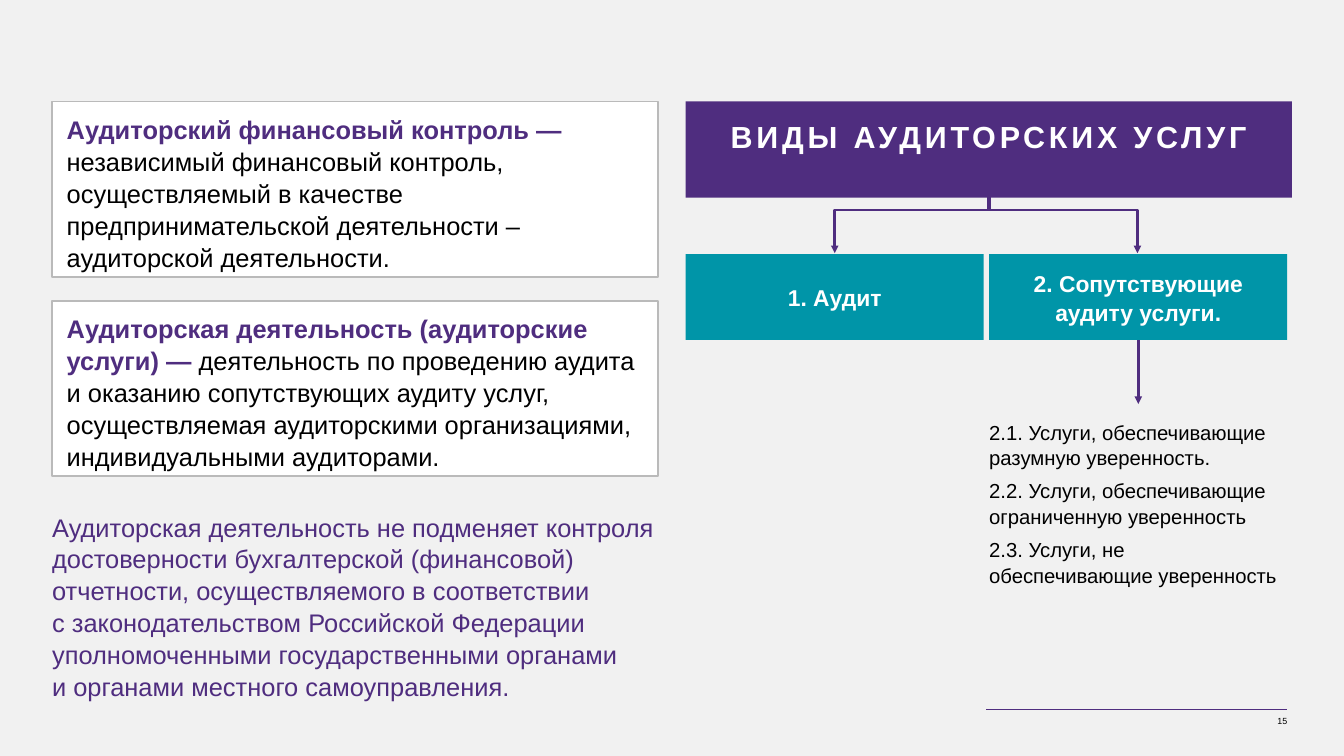
from pptx import Presentation
from pptx.dml.color import RGBColor
from pptx.enum.shapes import MSO_CONNECTOR as Link, MSO_SHAPE as Shape
from pptx.enum.text import MSO_ANCHOR as Anchor, MSO_AUTO_SIZE as AutoSize, PP_ALIGN as Align
from pptx.oxml.ns import qn
from pptx.util import Emu, Pt
from lxml.etree import SubElement

EMU_PER_PX = 9144
COLORS = {
    "background": "F1F1F1",
    "purple": "4F2D7F",
    "teal": "0095A8",
    "white": "FFFFFF",
    "black": "000000",
    "border": "BABABA",
}

LEFT, TOP, COLUMN_WIDTH = 57, 111, 663
CHART_LEFT, HEADING_HEIGHT = 750, 72
SERVICE_TOP, SERVICE_WIDTH, SERVICE_HEIGHT, SERVICE_STEP = 278, 326, 94, 332
DEFINITION_HEIGHT, DEFINITION_STEP = 192, 218
LIST_TOP = 442

DEFINITIONS = [
    ("Аудиторский финансовый контроль — ",
     "независимый финансовый контроль, осуществляемый в качестве "
     "предпринимательской деятельности – аудиторской деятельности."),
    ("Аудиторская деятельность (аудиторские услуги) — ",
     "деятельность по проведению аудита и оказанию сопутствующих аудиту услуг, "
     "осуществляемая аудиторскими организациями, индивидуальными аудиторами."),
]
REMARK = (
    "Аудиторская деятельность не подменяет контроля достоверности бухгалтерской "
    "(финансовой) отчетности, осуществляемого в соответствии\n"
    "с законодательством Российской Федерации уполномоченными государственными органами\n"
    "и органами местного самоуправления."
)
SERVICES = ["1. Аудит", "2. Сопутствующие аудиту услуги."]
RELATED_SERVICES = [
    "2.1. Услуги, обеспечивающие разумную уверенность.",
    "2.2. Услуги, обеспечивающие ограниченную уверенность",
    "2.3. Услуги, не обеспечивающие уверенность",
]


def px(*lengths):
    return [Emu(length * EMU_PER_PX) for length in lengths]


def rgb(name):
    return RGBColor.from_string(COLORS[name])


def set_frame(frame, insets, anchor=Anchor.TOP, grow=True, wrap=True):
    frame.margin_left, frame.margin_top, frame.margin_right, frame.margin_bottom = px(*insets)
    frame.vertical_anchor = anchor
    frame.auto_size = AutoSize.SHAPE_TO_FIT_TEXT if grow else AutoSize.NONE
    frame.word_wrap = wrap


def style_paragraph(paragraph, size, color=None, bold=None, align=Align.LEFT, before=0):
    paragraph.alignment = align
    paragraph.line_spacing = 1.05
    paragraph.space_before = Pt(before)
    font = paragraph.font
    font.name, font.size, font.bold = "Arial", Pt(size), bold
    if color:
        font.color.rgb = rgb(color)


def add_text(slide, box, texts, size, color, insets=(0, 0, 0, 0), wrap=True, **style):
    frame = slide.shapes.add_textbox(*px(*box)).text_frame
    set_frame(frame, insets, wrap=wrap)
    for index, text in enumerate(texts):
        paragraph = frame.add_paragraph() if index else frame.paragraphs[0]
        paragraph.text = text
        style_paragraph(paragraph, size, color, **style)


def add_panel(slide, box, fill, border=None):
    panel = slide.shapes.add_shape(Shape.RECTANGLE, *px(*box))
    panel.shadow.inherit = False
    panel.fill.solid()
    panel.fill.fore_color.rgb = rgb(fill)
    if border:
        panel.line.color.rgb = rgb(border)
        panel.line.width = Pt(1.25)
    else:
        panel.line.fill.background()
    return panel


def add_definition(slide, top, term, meaning):
    panel = add_panel(slide, (LEFT, top, COLUMN_WIDTH, DEFINITION_HEIGHT), "white", "border")
    set_frame(panel.text_frame, (16, 12, 16, 12))
    paragraph = panel.text_frame.paragraphs[0]
    style_paragraph(paragraph, 20)
    for text, color, bold in ((term, "purple", True), (meaning, "black", False)):
        run = paragraph.add_run()
        run.text = text
        run.font.color.rgb = rgb(color)
        run.font.bold = bold


def add_service(slide, left, name):
    panel = add_panel(slide, (left, SERVICE_TOP, SERVICE_WIDTH, SERVICE_HEIGHT), "teal")
    set_frame(panel.text_frame, (16, 12, 16, 12), Anchor.MIDDLE, grow=False)
    paragraph = panel.text_frame.paragraphs[0]
    paragraph.text = name
    style_paragraph(paragraph, 18, "white", True, Align.CENTER)


def format_heading(heading, text):
    heading.left, heading.top, heading.width, heading.height = px(
        CHART_LEFT, TOP, COLUMN_WIDTH, HEADING_HEIGHT)
    heading.fill.solid()
    heading.fill.fore_color.rgb = rgb("purple")
    set_frame(heading.text_frame, (16, 16, 16, 16))
    paragraph = heading.text_frame.paragraphs[0]
    run = paragraph.add_run()
    run.text = text
    style_paragraph(paragraph, 24, "white", True, Align.CENTER)
    run.font._element.set("spc", "300")


def add_line(slide, start, end, color="purple", width=2, arrow=True, kind=Link.STRAIGHT):
    line = slide.shapes.add_connector(kind, *px(*start, *end))
    line.line.color.rgb = rgb(color)
    line.line.width = Pt(width)
    properties = line._element.spPr
    if arrow:
        SubElement(properties.find(qn("a:ln")), qn("a:tailEnd"), type="triangle")
    SubElement(properties, qn("a:effectLst"))
    return line


def add_branch(slide, start, end):
    (x1, y1), (x2, y2) = start, end
    middle_x, middle_y = (x1 + x2) // 2, (y1 + y2) // 2
    half_drop, half_span = (y2 - y1) // 2, abs(x2 - x1) // 2
    side = 1 if x2 > x1 else -1
    branch = add_line(
        slide,
        (middle_x + side * half_drop, middle_y - half_span),
        (middle_x - side * half_drop, middle_y + half_span),
        kind=Link.ELBOW)
    angle = 270 if side > 0 else 90
    branch._element.spPr.find(qn("a:xfrm")).set("rot", str(angle * 60000))


def main():
    deck = Presentation()
    deck.slide_width, deck.slide_height = px(1470, 827)
    slide = deck.slides.add_slide(deck.slide_layouts[5])
    slide.background.fill.solid()
    slide.background.fill.fore_color.rgb = rgb("background")

    format_heading(slide.shapes.title, "ВИДЫ АУДИТОРСКИХ УСЛУГ")
    for index, (term, meaning) in enumerate(DEFINITIONS):
        add_definition(slide, TOP + index * DEFINITION_STEP, term, meaning)
    add_text(slide, (LEFT, 558, COLUMN_WIDTH, 202), [REMARK], 20, "purple")

    heading_foot = (CHART_LEFT + SERVICE_STEP, TOP + HEADING_HEIGHT)
    for index, name in enumerate(SERVICES):
        left = CHART_LEFT + index * SERVICE_STEP
        add_service(slide, left, name)
        add_branch(slide, heading_foot, (left + SERVICE_WIDTH // 2, SERVICE_TOP))

    related_left = CHART_LEFT + SERVICE_STEP
    related_center = related_left + SERVICE_WIDTH // 2
    add_line(slide, (related_center, SERVICE_TOP + SERVICE_HEIGHT), (related_center, LIST_TOP))
    add_text(slide, (related_left, LIST_TOP, SERVICE_WIDTH, 194), RELATED_SERVICES,
             16, "black", (0, 16, 0, 0), before=6)

    add_line(slide, (1079, 776), (1408, 776), width=0.75, arrow=False)
    add_text(slide, (1396, 777, 12, 22), ["15"], 7, "black", (0, 5, 0, 5),
             wrap=False, align=Align.RIGHT)
    deck.save("out.pptx")


if __name__ == "__main__":
    main()
